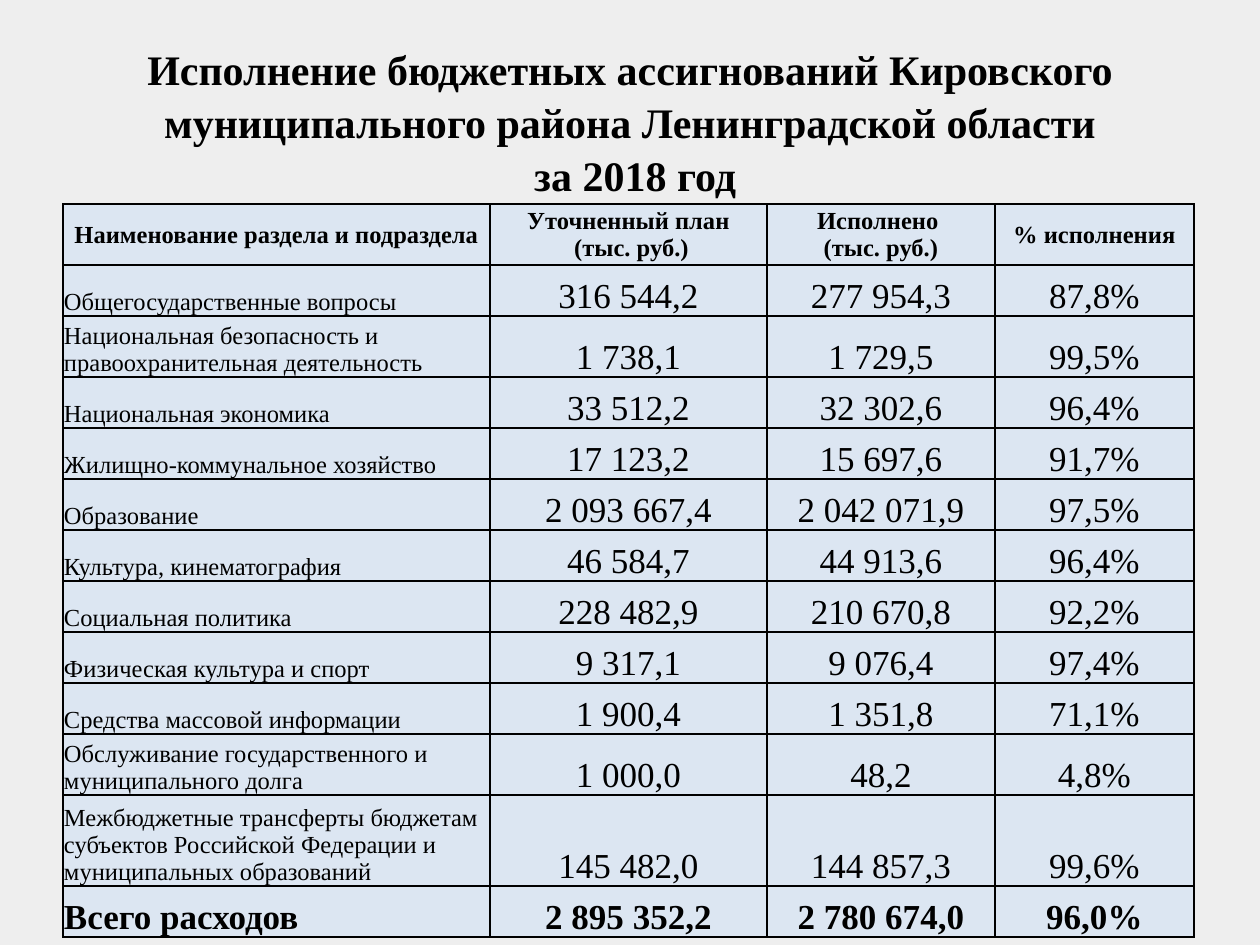
"""Builds the 2018 budget execution slide for the Kirovsky district."""
from lxml import etree
from pptx import Presentation
from pptx.dml.color import RGBColor
from pptx.enum.text import MSO_ANCHOR, PP_ALIGN
from pptx.oxml.ns import qn
from pptx.util import Pt

LEFT, CENTER = PP_ALIGN.LEFT, PP_ALIGN.CENTER
MIDDLE, BOTTOM = MSO_ANCHOR.MIDDLE, MSO_ANCHOR.BOTTOM

TITLE = ("Исполнение бюджетных ассигнований Кировского "
         "муниципального района Ленинградской области\v за 2018 год")
HEADER = ("Наименование раздела и подраздела", "Уточненный план\n (тыс. руб.)",
          "Исполнено \n(тыс. руб.)", "% исполнения")
SECTIONS = [
    ("Общегосударственные вопросы", "316 544,2", "277 954,3", "87,8%"),
    ("Национальная безопасность и правоохранительная деятельность",
     "1 738,1", "1 729,5", "99,5%"),
    ("Национальная экономика", "33 512,2", "32 302,6", "96,4%"),
    ("Жилищно-коммунальное хозяйство", "17 123,2", "15 697,6", "91,7%"),
    ("Образование", "2 093 667,4", "2 042 071,9", "97,5%"),
    ("Культура, кинематография", "46 584,7", "44 913,6", "96,4%"),
    ("Социальная политика", "228 482,9", "210 670,8", "92,2%"),
    ("Физическая культура и спорт", "9 317,1", "9 076,4", "97,4%"),
    ("Средства массовой информации", "1 900,4", "1 351,8", "71,1%"),
    ("Обслуживание государственного и муниципального долга",
     "1 000,0", "48,2", "4,8%"),
    ("Межбюджетные трансферты бюджетам субъектов Российской Федерации "
     "и муниципальных образований", "145 482,0", "144 857,3", "99,6%"),
]
TOTAL = ("Всего расходов", "2 895 352,2", "2 780 674,0", "96,0%")
ROWS = [HEADER, *SECTIONS, TOTAL]

THEME = {
    "font": "Times New Roman",
    "text": RGBColor(0x00, 0x00, 0x00),
    "bg": RGBColor(0xEE, 0xEE, 0xEE),
    "cell": RGBColor(0xDC, 0xE6, 0xF2),
    "border": "000000",
    "title": 24, "label": 14, "value": 20,
}
COL_WIDTHS = (427, 277, 228, 199)
ROW_HEIGHT = 51
TALL_ROWS = {0: 61, 2: 61, 10: 61, 11: 91}


def px(n):
    return round(n * 914400 / 126)


def style(p, size, bold, align):
    p.alignment = align
    p.font.name = THEME["font"]
    p.font.size = Pt(size)
    p.font.bold = bold
    p.font.color.rgb = THEME["text"]


def add_borders(cell):
    tc_pr = cell._tc.get_or_add_tcPr()
    for i, side in enumerate(("a:lnL", "a:lnR", "a:lnT", "a:lnB")):
        ln = etree.Element(qn(side), w=str(Pt(1)))
        fill = etree.SubElement(ln, qn("a:solidFill"))
        etree.SubElement(fill, qn("a:srgbClr"), val=THEME["border"])
        tc_pr.insert(i, ln)


def fill_cell(cell, text, row, col):
    head, total = row == 0, row == len(ROWS) - 1
    cell.text = text
    cell.margin_left = cell.margin_right = cell.margin_top = px(1)
    cell.margin_bottom = 0
    cell.vertical_anchor = MIDDLE if head else BOTTOM
    cell.fill.solid()
    cell.fill.fore_color.rgb = THEME["cell"]
    size = THEME["label" if head or (col == 0 and not total) else "value"]
    for p in cell.text_frame.paragraphs:
        style(p, size, head or total, CENTER if head or col else LEFT)
    add_borders(cell)


def add_title(s):
    title = s.shapes.title
    title.left, title.top, title.width, title.height = map(px, (63, 49, 1134, 157))
    tf = title.text_frame
    tf.text = TITLE
    tf.word_wrap = True
    tf.vertical_anchor = BOTTOM
    p = tf.paragraphs[0]
    style(p, THEME["title"], True, CENTER)
    p.line_spacing = 1.05


def add_budget_table(s):
    heights = [TALL_ROWS.get(i, ROW_HEIGHT) for i in range(len(ROWS))]
    box = map(px, (63, 204, sum(COL_WIDTHS), sum(heights)))
    table = s.shapes.add_table(len(ROWS), len(COL_WIDTHS), *box).table
    table.first_row = table.horz_banding = False
    for column, width in zip(table.columns, COL_WIDTHS):
        column.width = px(width)
    for i, (values, height) in enumerate(zip(ROWS, heights)):
        table.rows[i].height = px(height)
        for j, text in enumerate(values):
            fill_cell(table.cell(i, j), text, i, j)


def main():
    prs = Presentation()
    prs.slide_width, prs.slide_height = px(1260), px(945)
    s = prs.slides.add_slide(prs.slide_layouts[5])
    s.background.fill.solid()
    s.background.fill.fore_color.rgb = THEME["bg"]
    add_budget_table(s)
    add_title(s)
    prs.save("out.pptx")


if __name__ == "__main__":
    main()
